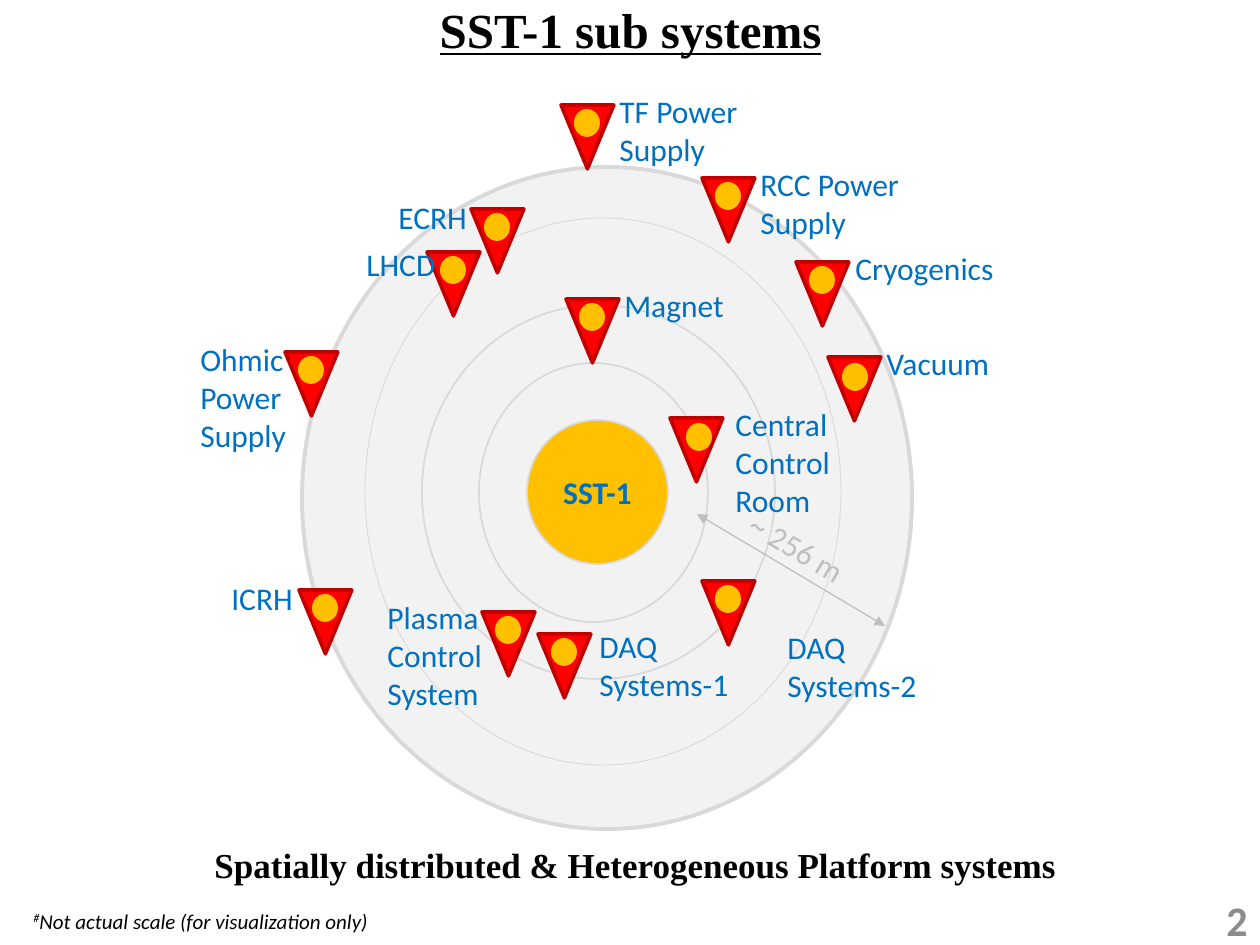
from lxml import etree
from pptx import Presentation
from pptx import util as u
from pptx.dml.color import RGBColor
from pptx.enum import shapes, text
from pptx.oxml.ns import qn

SCALE = 914400 / 126
THEME = {
    "heading": "Times New Roman", "body": "Calibri",
    "black": "000000", "label": "0070C0", "number": "8C8C8C", "distance": "BFBFBF",
    "zone": "F2F2F2", "ring": "D9D9D9", "core": "FFC000", "marker": "FF0000", "edge": "C00000",
    "title": 28, "summary": 20, "normal": 18, "note": 12, "page": 24,
}


def add_shape(kind, box, fill, line=None, width=1):
    shape = slide.shapes.add_shape(kind, *[round(value * SCALE) for value in box])
    shape.shadow.inherit = False
    shape.fill.solid()
    shape.fill.fore_color.rgb = RGBColor.from_string(THEME[fill])
    if line:
        shape.line.color.rgb = RGBColor.from_string(THEME[line])
        shape.line.width = u.Pt(width)
    else:
        shape.line.fill.background()
    return shape


def add_text(box, lines, size, color, face="body", align="LEFT", wrap=False, shape=None, **style):
    if shape is None:
        shape = slide.shapes.add_textbox(*[round(value * SCALE) for value in box])
        shape.text_frame.auto_size = text.MSO_AUTO_SIZE.SHAPE_TO_FIT_TEXT
    frame = shape.text_frame
    frame.word_wrap = wrap
    frame.text = "\n".join(lines)
    font_values = {"name": THEME[face], "size": u.Pt(THEME[size]), **style}
    for paragraph in frame.paragraphs:
        paragraph.alignment = text.PP_ALIGN[align]
        for run in paragraph.runs:
            for name, value in font_values.items():
                setattr(run.font, name, value)
            run.font.color.rgb = RGBColor.from_string(THEME[color])
    return shape


presentation = Presentation()
presentation.slide_width, presentation.slide_height = u.Inches(10), u.Inches(7.5)
slide = presentation.slides.add_slide(presentation.slide_layouts[6])
ellipse = shapes.MSO_SHAPE.OVAL

title = add_text((37, 0, 1187, 67), ["SST-1 sub systems"], "title", "black", "heading",
                 "CENTER", True, bold=True, underline=True)
summary = add_text((42, 842, 1187, 50), ["Spatially distributed & Heterogeneous Platform systems"],
                   "summary", "black", "heading", "CENTER", True, bold=True)
for heading in (title, summary):
    heading.text_frame.paragraphs[0].line_spacing = 0.9

rings = [
    ((302, 167, 610, 662), 2.25, None),
    ((365, 218, 476, 547), 0.5, None),
    ((422, 305, 353, 374), 1, 50000),
    ((479, 363, 229, 259), 1, None),
]
for box, width, alpha in rings:
    ring = add_shape(ellipse, box, "zone", "ring", width)
    if alpha:
        fill_color = ring.fill._xPr.find(qn("a:solidFill"))[0]
        etree.SubElement(fill_color, qn("a:alpha"), val=str(alpha))

core = add_shape(ellipse, (527, 420, 141, 144), "core", "ring")
add_text(None, ["SST-1"], "normal", "label", align="CENTER", wrap=True, shape=core, bold=True)
core.text_frame.vertical_anchor = text.MSO_ANCHOR.MIDDLE

subsystems = [
    ("RCC Power\nSupply", (702, 178), (748, 159), 168),
    ("Central\nControl\nRoom", (670, 418), (723, 399), 121),
    ("DAQ\nSystems-2", (702, 581), (775, 622), 155),
    ("DAQ\nSystems-1", (538, 634), (587, 621), 155),
    ("ICRH", (299, 590), (219, 573), 87),
    ("Ohmic\nPower\nSupply", (285, 352), (188, 334), 115),
    ("LHCD", (427, 252), (354, 239), 96),
    ("ECRH", (471, 209), (386, 192), 95),
    ("Plasma\nControl\nSystem", (482, 612), (375, 592), 121),
    ("TF Power\nSupply", (561, 105), (607, 86), 147),
    ("Cryogenics", (796, 262), (843, 243), 168),
    ("Vacuum", (828, 357), (874, 338), 132),
    ("Magnet", (566, 299), (612, 280), 129),
]
dot_offsets = {"Central\nControl\nRoom": (16, 5), "Vacuum": (14, 6)}
for name, (left, top), label_corner, label_width in subsystems:
    dot_x, dot_y = dot_offsets.get(name, (13, 4))
    add_shape(shapes.MSO_SHAPE.FLOWCHART_MERGE, (left, top, 53, 64), "marker", "edge", 2)
    add_shape(ellipse, (left + dot_x, top + dot_y, 26, 28), "core")
    lines = name.split("\n")
    add_text((*label_corner, label_width, 12 + 38 * len(lines)), lines, "normal", "label")

ends = [round(value * SCALE) for value in (885, 626, 697, 514)]
radius = slide.shapes.add_connector(shapes.MSO_CONNECTOR.STRAIGHT, *ends)
radius.line.color.rgb = RGBColor.from_string(THEME["distance"])
radius.line.width = u.Pt(0.75)
for end in ("a:headEnd", "a:tailEnd"):
    etree.SubElement(radius.line._get_or_add_ln(), qn(end), type="triangle")
etree.SubElement(radius._element.spPr, qn("a:effectLst"))
distance = add_text((733, 523, 130, 50), ["~ 256 m"], "normal", "distance")
distance.rotation = 31

note = add_text((21, 902, 1183, 38), ["#"], "note", "black", wrap=True, italic=True)
mark = note.text_frame.paragraphs[0].runs[0]
mark.font._element.set("baseline", "30000")
remark = note.text_frame.paragraphs[0].add_run()
remark.text = "Not actual scale (for visualization only)"
for name, value in {"name": THEME["body"], "size": u.Pt(THEME["note"]), "italic": True}.items():
    setattr(remark.font, name, value)
remark.font.color.rgb = RGBColor.from_string(THEME["black"])

page = add_text((966, 895, 294, 50), ["2"], "page", "number", align="RIGHT", wrap=True, bold=True)
page.text_frame.auto_size = text.MSO_AUTO_SIZE.NONE
page.text_frame.vertical_anchor = text.MSO_ANCHOR.MIDDLE

presentation.save("out.pptx")
